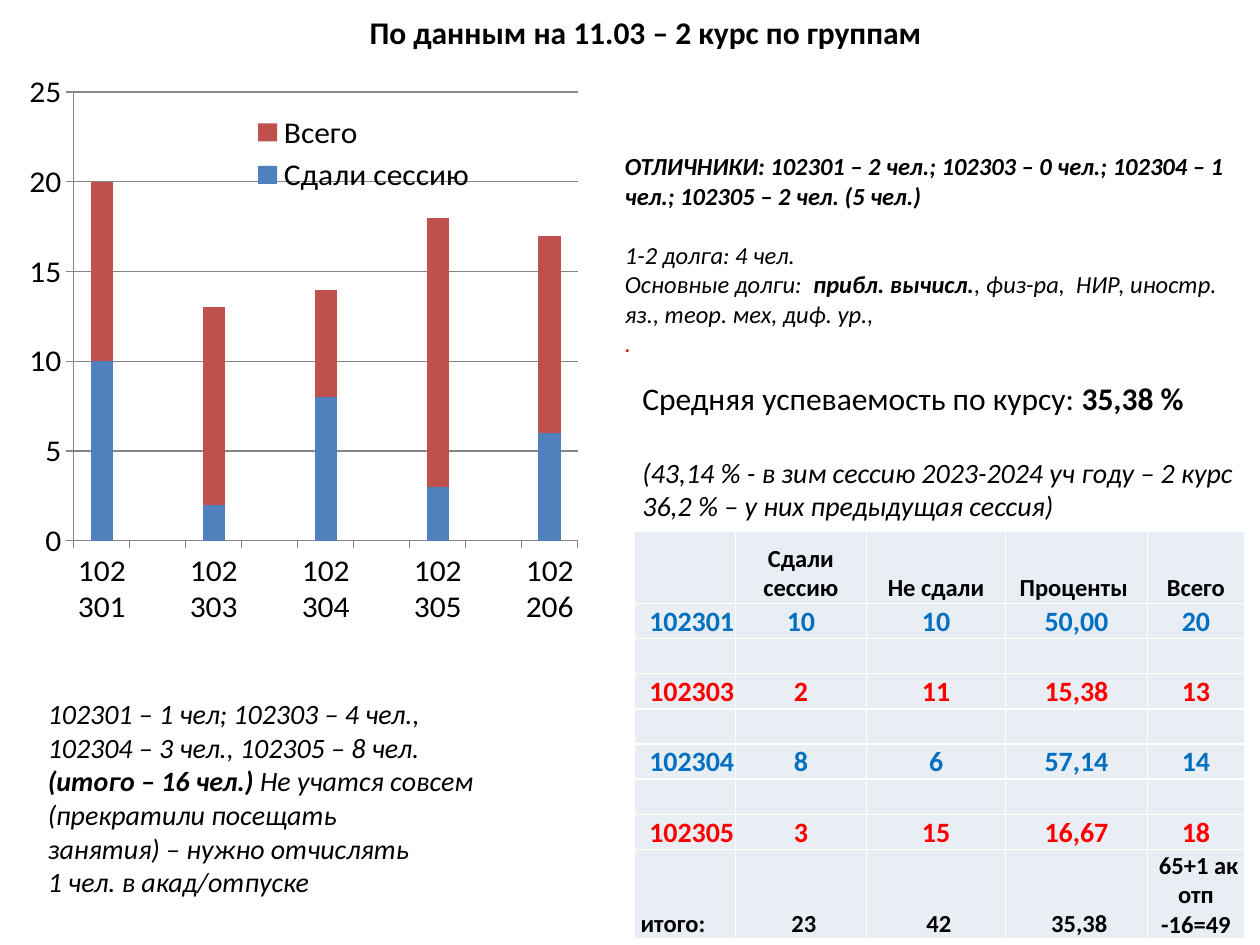
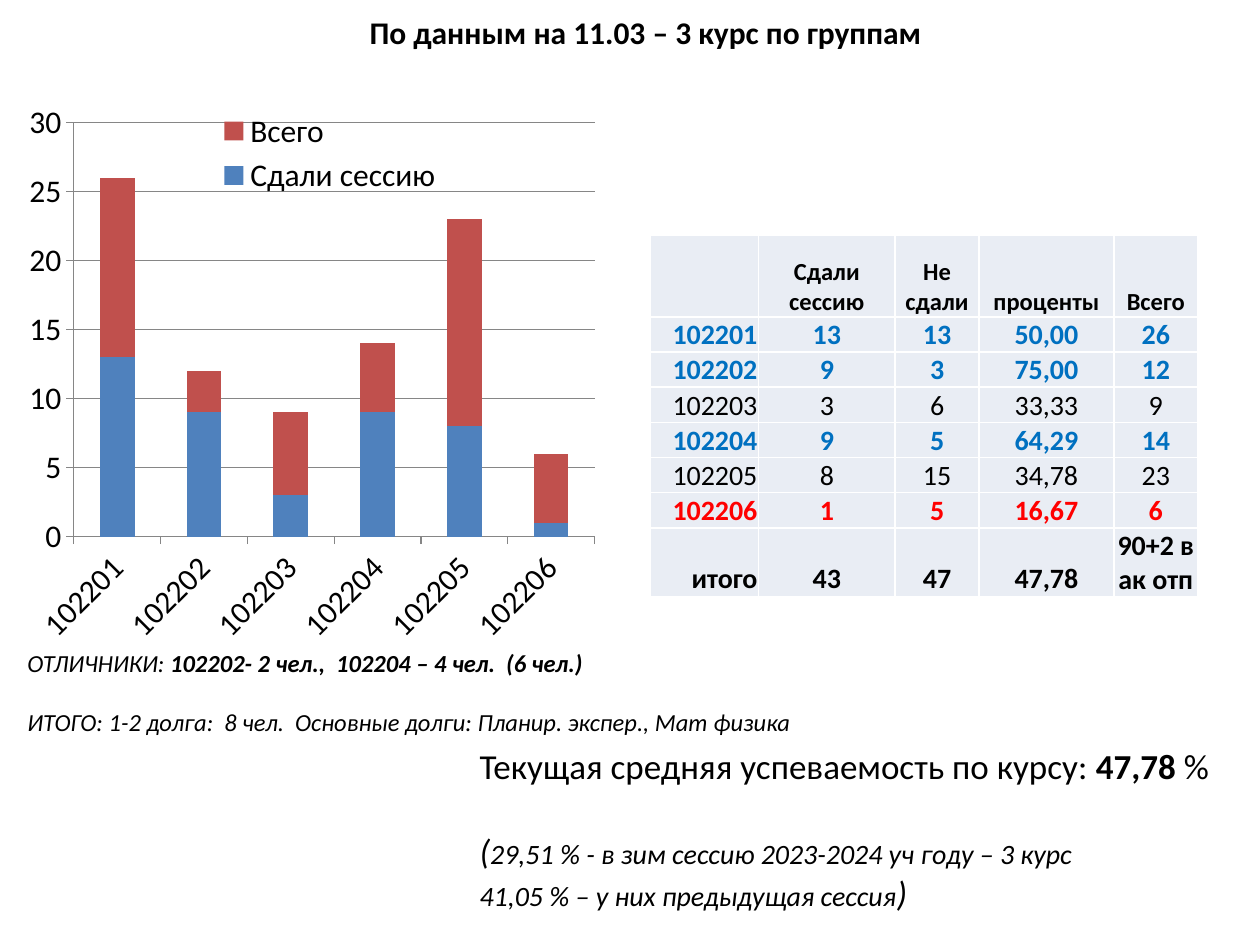
from lxml.etree import SubElement
from pptx import Presentation
from pptx.chart.data import CategoryChartData
from pptx.dml.color import RGBColor
from pptx.enum.chart import XL_CHART_TYPE, XL_LEGEND_POSITION, XL_TICK_MARK
from pptx.enum.text import MSO_ANCHOR, PP_ALIGN
from pptx.oxml.ns import qn
from pptx.util import Pt

FONT = "Calibri"
HEX = {"black": "000000", "white": "FFFFFF", "red": "FF0000", "blue": "0070C0",
       "cell": "E9EDF4", "passed": "4F81BD", "total": "C0504D", "grid": "868686"}
ROW = 20.1


def rgb(name):
    return RGBColor.from_string(HEX[name])


def place(node, index, box):
    """Give a chart part a fixed place, in fractions of the chart."""
    for old in node.findall(qn("c:layout")):
        node.remove(old)
    outer = SubElement(node, qn("c:layout"))
    node.insert(index, outer)
    inner = SubElement(outer, qn("c:manualLayout"))
    if node.tag == qn("c:plotArea"):
        SubElement(inner, qn("c:layoutTarget")).set("val", "inner")
    for key in ("xMode", "yMode"):
        SubElement(inner, qn("c:" + key)).set("val", "edge")
    for key, value in zip("xywh", box):
        SubElement(inner, qn("c:" + key)).set("val", str(value))


class Deck:
    def __init__(self):
        self.prs = Presentation()
        self.prs.slide_width, self.prs.slide_height = Pt(720), Pt(540)
        self.slide = None

    def start(self, title):
        self.slide = self.prs.slides.add_slide(self.prs.slide_layouts[6])
        self.text((42.5, 3.6, 657, 29), [(0, (title, 18, "b"))], align=PP_ALIGN.CENTER)

    def run(self, par, text, size, flags="", color="black"):
        run = par.add_run()
        run.text = text
        font = run.font
        font.name, font.size = FONT, Pt(size)
        font.bold, font.italic = "b" in flags, "i" in flags
        font.color.rgb = rgb(color)

    def text(self, box, pars, wrap=True, align=PP_ALIGN.LEFT):
        """Each paragraph is the gap above it, then its runs."""
        frame = self.slide.shapes.add_textbox(*map(Pt, box)).text_frame
        frame.word_wrap = wrap
        for i, (gap, *runs) in enumerate(pars):
            par = frame.add_paragraph() if i else frame.paragraphs[0]
            par.alignment = align
            if gap:
                par.space_before = Pt(gap)
            for item in runs:
                self.run(par, *item)

    def chart(self, top, cats, passed, rest, peak, plot, key, turn):
        data = CategoryChartData()
        data.categories = cats
        data.add_series("Сдали сессию", passed)
        data.add_series("Всего", rest)
        chart = self.slide.shapes.add_chart(
            XL_CHART_TYPE.COLUMN_STACKED, Pt(8.6), Pt(top), Pt(480), Pt(320), data).chart
        chart.has_title = False
        chart.font.name, chart.font.size = FONT, Pt(18)
        chart.font.color.rgb = rgb("black")
        bars = chart.plots[0]
        bars.gap_width, bars.overlap, bars.vary_by_categories = 150, 100, False
        for series, color in zip(bars.series, ("passed", "total")):
            series.format.fill.solid()
            series.format.fill.fore_color.rgb = rgb(color)
        value, cat = chart.value_axis, chart.category_axis
        value.minimum_scale, value.maximum_scale, value.major_unit = 0, peak, 5
        value.has_major_gridlines = True
        for line in (value.format.line, cat.format.line, value.major_gridlines.format.line):
            line.color.rgb = rgb("grid")
            line.width = Pt(0.75)
        for axis in (value, cat):
            axis.major_tick_mark = XL_TICK_MARK.OUTSIDE
            axis.tick_labels.font.size = Pt(18)
        names = [qn(n) for n in ("c:catAx", "c:txPr", "a:bodyPr")]
        chart.element.find(".//" + "/".join(names)).set("rot", str(turn * 60000))
        chart.has_legend = True
        chart.legend.position = XL_LEGEND_POSITION.RIGHT
        chart.legend.include_in_layout = True
        chart.legend.font.size = Pt(18)
        place(chart.element.find(".//" + qn("c:plotArea")), 0, plot)
        place(chart.element.find(".//" + qn("c:legend")), 1, key)

    def cell(self, cell, text, size, flags, color, align):
        cell.vertical_anchor = MSO_ANCHOR.BOTTOM
        cell.margin_left = cell.margin_right = cell.margin_top = Pt(0.7)
        cell.margin_bottom = 0
        props = cell._tc.get_or_add_tcPr()
        for side in "LRTB":
            line = SubElement(props, qn("a:ln" + side), w=str(Pt(1)))
            fill = SubElement(line, qn("a:solidFill"))
            SubElement(fill, qn("a:srgbClr"), val=HEX["white"])
        cell.fill.solid()
        cell.fill.fore_color.rgb = rgb("cell")
        frame = cell.text_frame
        for i, part in enumerate(text.split("\n")):
            par = frame.add_paragraph() if i else frame.paragraphs[0]
            par.alignment = align
            if part:
                self.run(par, part, size, flags, color)
            else:
                SubElement(par._p, qn("a:endParaRPr"), sz=str(size * 100))

    def table(self, spot, widths, head, foot, rows):
        """Rows are a colour and the cell texts; head and foot are the outer row heights."""
        heights = [head] + [ROW] * (len(rows) - 2) + [foot]
        grid = self.slide.shapes.add_table(
            len(rows), len(widths), *map(Pt, (*spot, sum(widths), sum(heights)))).table
        grid.first_row = grid.horz_banding = False
        for col, width in zip(grid.columns, widths):
            col.width = Pt(width)
        for r, (color, size, flags, *texts) in enumerate(rows):
            grid.rows[r].height = Pt(heights[r])
            for c, text in enumerate(texts or [""] * len(widths)):
                align = PP_ALIGN.CENTER if c else PP_ALIGN.RIGHT
                if text.endswith(":"):
                    align = PP_ALIGN.LEFT
                self.cell(grid.cell(r, c), text, size, flags, color, align)


def second(deck):
    deck.start("По данным на 11.03 – 2 курс по группам ")
    deck.chart(37.4, ["102301", "", "102303", "", "102304", "", "102305", "", "102206"],
               [10, None, 2, None, 8, None, 3, None, 6],
               [10, None, 11, None, 6, None, 15, None, 11], 25,
               (0.07, 0.05, 0.6, 0.84), (0.28, 0.08, 0.27, 0.17), 0)
    deck.text((350, 82.8, 363, 126), [
        (0, ("ОТЛИЧНИКИ: 102301 – 2 чел.; 102303 – 0 чел.; 102304 – 1 чел.; "
             "102305 – 2 чел. (5 чел.)", 14, "bi")),
        (17, ("1-2 долга: 4 чел.", 14, "i")),
        (0, ("Основные долги:  ", 14, "i"), ("прибл. вычисл.", 14, "bi"),
         (", физ-ра,  НИР, иностр. яз., теор. мех, диф. ур.,", 14, "i")),
        (0, (".", 14, "i", "red"))])
    empty = ("black", 16, "")
    deck.table((362.2, 303.8), (58, 75, 79.5, 81, 55.5), 41, 50.5, [
        ("black", 14, "b", "", "Сдали сессию", "Не сдали", "Проценты ", "Всего"),
        ("blue", 16, "b", "102301", "10", "10", "50,00", "20"), empty,
        ("red", 16, "b", "102303", "2", "11", "15,38", "13"), empty,
        ("blue", 16, "b", "102304", "8", "6", "57,14", "14"), empty,
        ("red", 16, "b", "102305", "3", "15", "16,67", "18"),
        ("black", 14, "b", " итого:", " 23", " 42", " 35,38", " 65+1 ак отп\n-16=49")])
    deck.text((360, 213, 356.4, 90), [
        (0, ("Средняя успеваемость по курсу: ", 18), ("35,38 %", 18, "b")),
        (22, ("(43,14 % - в зим сессию 2023-2024 уч году – 2 курс", 16, "i")),
        (0, ("36,2 % – у них предыдущая сессия)", 16, "i"))], wrap=False)
    deck.text((20.2, 394.6, 265, 124), [
        (0, ("102301 – 1 чел; 102303 – 4 чел.,", 16, "i")),
        (0, ("102304 – 3 чел., 102305 – 8 чел.", 16, "i")),
        (0, ("(итого – 16 чел.) ", 16, "bi"), ("Не учатся совсем", 16, "i")),
        (0, ("(прекратили посещать", 16, "i")),
        (0, ("занятия) – нужно отчислять", 16, "i")),
        (0, ("1 чел. в акад/отпуске", 16, "i"))], wrap=False)


def third(deck):
    deck.start("По данным на 11.03 – 3 курс по группам ")
    deck.chart(54, [str(n) for n in range(102201, 102207)],
               [13, 9, 3, 9, 8, 1], [13, 3, 6, 5, 15, 5], 30,
               (0.07, 0.05, 0.62, 0.74), (0.24, 0.02, 0.27, 0.17), -45)
    deck.text((8.6, 366.5, 680, 58), [
        (0, ("ОТЛИЧНИКИ: ", 14, "i"),
         ("102202- 2 чел.,  102204 – 4 чел.  (6 чел.)", 14, "bi")),
        (17, ("ИТОГО: 1-2 долга:  8 чел.  Основные долги: Планир. экспер., Мат физика",
              14, "i"))])
    deck.text((267, 422, 441.4, 104), [
        (0, ("Текущая средняя успеваемость по курсу: ", 20), ("47,78 ", 20, "b"), ("%", 20)),
        (24.4, ("(", 20, "i"),
         ("29,51 % - в зим сессию 2023-2024 уч году – 3 курс", 16, "i")),
        (0, ("41,05 % – у них предыдущая сессия", 16, "i"), (")", 20, "i"))], wrap=False)
    deck.table((371.5, 134.6), (62, 78, 48, 77, 48), 46.5, 39, [
        ("black", 14, "b", "", "Сдали сессию", "Не сдали", "проценты", "Всего"),
        ("blue", 16, "b", "102201", "13", "13", "50,00", "26"),
        ("blue", 16, "b", "102202", "9", "3", "75,00", "12"),
        ("black", 16, "", "102203", "3", "6", "33,33", "9"),
        ("blue", 16, "b", "102204", "9", "5", "64,29", "14"),
        ("black", 16, "", "102205", "8", "15", "34,78", "23"),
        ("red", 16, "b", "102206", "1", "5", "16,67", "6"),
        ("black", 16, "b", "итого", "43", "47", "47,78", "90+2 в ак отп")])


def main():
    deck = Deck()
    second(deck)
    third(deck)
    deck.prs.save("out.pptx")


if __name__ == "__main__":
    main()
